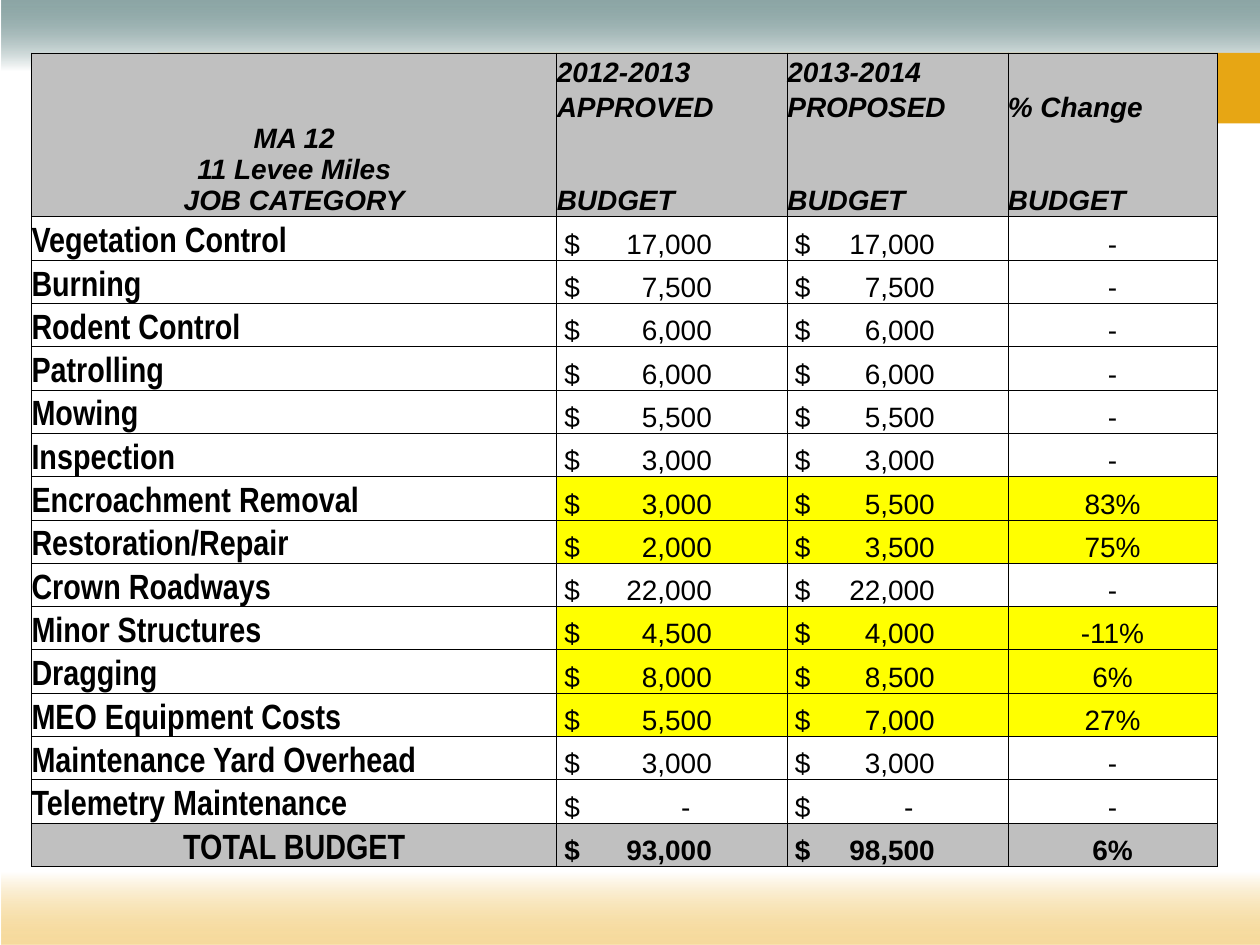
"""Build the levee maintenance budget slide for area MA 12."""
from dataclasses import dataclass

import pptx
import pptx.dml.color
import pptx.enum.shapes
import pptx.enum.text
import pptx.oxml.ns
import pptx.util
from lxml import etree

Inches = pptx.util.Inches
Align = pptx.enum.text.PP_ALIGN
qn = pptx.oxml.ns.qn

COLOURS = {"teal": "215352", "amber": "EEB840", "orange": "E7A614", "white": "FFFFFF",
           "black": "000000", "header": "C0C0C0", "total": "BFBFBF", "changed": "FFFF00"}
HEADER = {"name": "Arial", "size": pptx.util.Pt(16), "bold": True, "italic": True}
CATEGORY = {**HEADER, "name": "Arial Narrow", "size": pptx.util.Pt(20), "italic": False}
FIGURE = {**HEADER, "bold": False, "italic": False}
TOTAL = {**FIGURE, "bold": True}

COLUMN_WIDTHS = (4.17, 1.83, 1.75, 1.66)
HEADER_HEIGHTS = (0.28, 0.28, 0.74)
BODY_HEIGHT = 0.344
AMOUNT_INSET = 0.06
AMOUNT_TABS = {1: 1.17, 2: 1.11}
DASH_OFFSET = 0.17


@dataclass(frozen=True)
class Band:
    """A decorative bar; with an angle it fades to white."""
    left: float
    top: float
    width: float
    height: float
    colour: str
    angle: int | None = None


@dataclass(frozen=True)
class BudgetLine:
    """One job category with its two budgets."""
    category: str
    approved: str
    proposed: str
    change: str = "-"


BANDS = (
    Band(0.01, 0, 9.99, 1.09, "teal", 270),
    Band(1.25, 0.42, 8.75, 0.56, "orange"),
    Band(0.01, 6.39, 9.99, 1.11, "amber", 90),
)
TITLE_LINES = ("MA 12", "11 Levee Miles", "JOB CATEGORY")
HEADINGS = (
    ("2012-2013", "2013-2014", ""),
    ("APPROVED", "PROPOSED", "% Change"),
    ("BUDGET", "BUDGET", "BUDGET"),
)
LINES = (
    BudgetLine("Vegetation Control", "17,000", "17,000"),
    BudgetLine("Burning", "7,500", "7,500"),
    BudgetLine("Rodent Control", "6,000", "6,000"),
    BudgetLine("Patrolling", "6,000", "6,000"),
    BudgetLine("Mowing", "5,500", "5,500"),
    BudgetLine("Inspection", "3,000", "3,000"),
    BudgetLine("Encroachment Removal", "3,000", "5,500", "83%"),
    BudgetLine("Restoration/Repair", "2,000", "3,500", "75%"),
    BudgetLine("Crown Roadways", "22,000", "22,000"),
    BudgetLine("Minor Structures", "4,500", "4,000", "-11%"),
    BudgetLine("Dragging", "8,000", "8,500", "6%"),
    BudgetLine("MEO Equipment Costs", "5,500", "7,000", "27%"),
    BudgetLine("Maintenance Yard Overhead", "3,000", "3,000"),
    BudgetLine("Telemetry Maintenance", "-", "-"),
    BudgetLine("TOTAL BUDGET", "93,000", "98,500", "6%"),
)


def rgb(name: str) -> pptx.dml.color.RGBColor:
    """Return the named colour."""
    return pptx.dml.color.RGBColor.from_string(COLOURS[name])


def draw_band(page, band: Band) -> None:
    """Draw a solid or fading bar."""
    box = page.shapes.add_shape(
        pptx.enum.shapes.MSO_SHAPE.RECTANGLE,
        *map(Inches, (band.left, band.top, band.width, band.height)))
    box.shadow.inherit = False
    box.line.fill.background()
    if band.angle is None:
        box.fill.solid()
        box.fill.fore_color.rgb = rgb(band.colour)
        return
    box.fill.gradient()
    box.fill.gradient_angle = band.angle
    for stop, name, position in zip(box.fill.gradient_stops, (band.colour, "white"), (0, 0.52)):
        stop.color.rgb = rgb(name)
        stop.position = position
    first_colour = next(box.element.iter(qn("a:gs"))).find(qn("a:srgbClr"))
    etree.SubElement(first_colour, qn("a:alpha"), val="51000")


def style_cell(cell, fill: str | None, sides: str = "LRTB", inset: float = 0) -> None:
    """Set the margins, anchor, borders and fill of a cell."""
    formats = {"margin_left": Inches(inset), "margin_right": 0, "margin_top": 0,
               "margin_bottom": 0, "vertical_anchor": pptx.enum.text.MSO_ANCHOR.BOTTOM}
    for key, value in formats.items():
        setattr(cell, key, value)
    properties = cell._tc.get_or_add_tcPr()
    for side in "LRTB":
        border = etree.SubElement(properties, qn(f"a:ln{side}"), w=str(pptx.util.Pt(0.5)))
        if side in sides:
            paint = etree.SubElement(border, qn("a:solidFill"))
            etree.SubElement(paint, qn("a:srgbClr"), val=COLOURS["black"])
        else:
            etree.SubElement(border, qn("a:noFill"))
    if fill:
        cell.fill.solid()
        cell.fill.fore_color.rgb = rgb(fill)
    else:
        cell.fill.background()


def write(para, text: str, formats: dict, align=Align.LEFT) -> None:
    """Write one formatted line of text."""
    para.alignment = align
    if not text:
        size = str(int(formats["size"].pt * 100))
        etree.SubElement(para._p, qn("a:endParaRPr"), sz=size)
        return
    span = para.add_run()
    span.text = text
    for key, value in formats.items():
        setattr(span.font, key, value)
    span.font.color.rgb = rgb("black")


def write_amount(para, amount: str, tab: float, formats: dict) -> None:
    """Write a dollar sign and an amount aligned at a right tab."""
    position = tab - DASH_OFFSET if amount == "-" else tab
    tabs = etree.SubElement(para._p.get_or_add_pPr(), qn("a:tabLst"))
    etree.SubElement(tabs, qn("a:tab"), pos=str(Inches(position)), algn="r")
    write(para, f"$\t{amount}", formats)


def fill_header(table) -> None:
    """Fill the three heading rows and the merged title cell."""
    for row, (headings, sides) in enumerate(zip(HEADINGS, ("LRT", "LR", "LRB"))):
        style_cell(table.cell(row, 0), "header")
        for column, heading in enumerate(headings, 1):
            cell = table.cell(row, column)
            style_cell(cell, "header", sides)
            write(cell.text_frame.paragraphs[0], heading, HEADER)
    title = table.cell(0, 0)
    title.merge(table.cell(len(HEADINGS) - 1, 0))
    for index, text in enumerate(TITLE_LINES):
        frame = title.text_frame
        para = frame.add_paragraph() if index else frame.paragraphs[0]
        write(para, text, HEADER, Align.CENTER)


def fill_line(table, row: int, line: BudgetLine, is_total: bool) -> None:
    """Fill one budget row."""
    changed = None if line.change == "-" else "changed"
    fills = ("header", "header", "header", "total") if is_total else (None, *[changed] * 3)
    figure = TOTAL if is_total else FIGURE
    cells = [table.cell(row, column) for column in range(len(COLUMN_WIDTHS))]
    for column, (cell, fill) in enumerate(zip(cells, fills)):
        style_cell(cell, fill, inset=AMOUNT_INSET if column in AMOUNT_TABS else 0)
    paras = [cell.text_frame.paragraphs[0] for cell in cells]
    write(paras[0], line.category, CATEGORY, Align.CENTER if is_total else Align.LEFT)
    for (column, tab), amount in zip(AMOUNT_TABS.items(), (line.approved, line.proposed)):
        write_amount(paras[column], amount, tab, figure)
    write(paras[3], line.change, figure, Align.CENTER)


def draw_budget(page) -> None:
    """Draw the budget table."""
    heights = (*HEADER_HEIGHTS, *[BODY_HEIGHT] * len(LINES))
    table = page.shapes.add_table(
        len(heights), len(COLUMN_WIDTHS), Inches(0.25), Inches(0.42),
        Inches(sum(COLUMN_WIDTHS)), Inches(sum(heights))).table
    table.first_row = table.horz_banding = False
    for column, width in zip(table.columns, COLUMN_WIDTHS):
        column.width = Inches(width)
    for row, height in zip(table.rows, heights):
        row.height = Inches(height)
    fill_header(table)
    for row, line in enumerate(LINES, len(HEADINGS)):
        fill_line(table, row, line, line is LINES[-1])


def main() -> None:
    """Build and save the deck."""
    deck = pptx.Presentation()
    deck.slide_width, deck.slide_height = Inches(10), Inches(7.5)
    page = deck.slides.add_slide(deck.slide_layouts[6])
    for band in BANDS:
        draw_band(page, band)
    draw_budget(page)
    deck.save("out.pptx")


if __name__ == "__main__":
    main()
